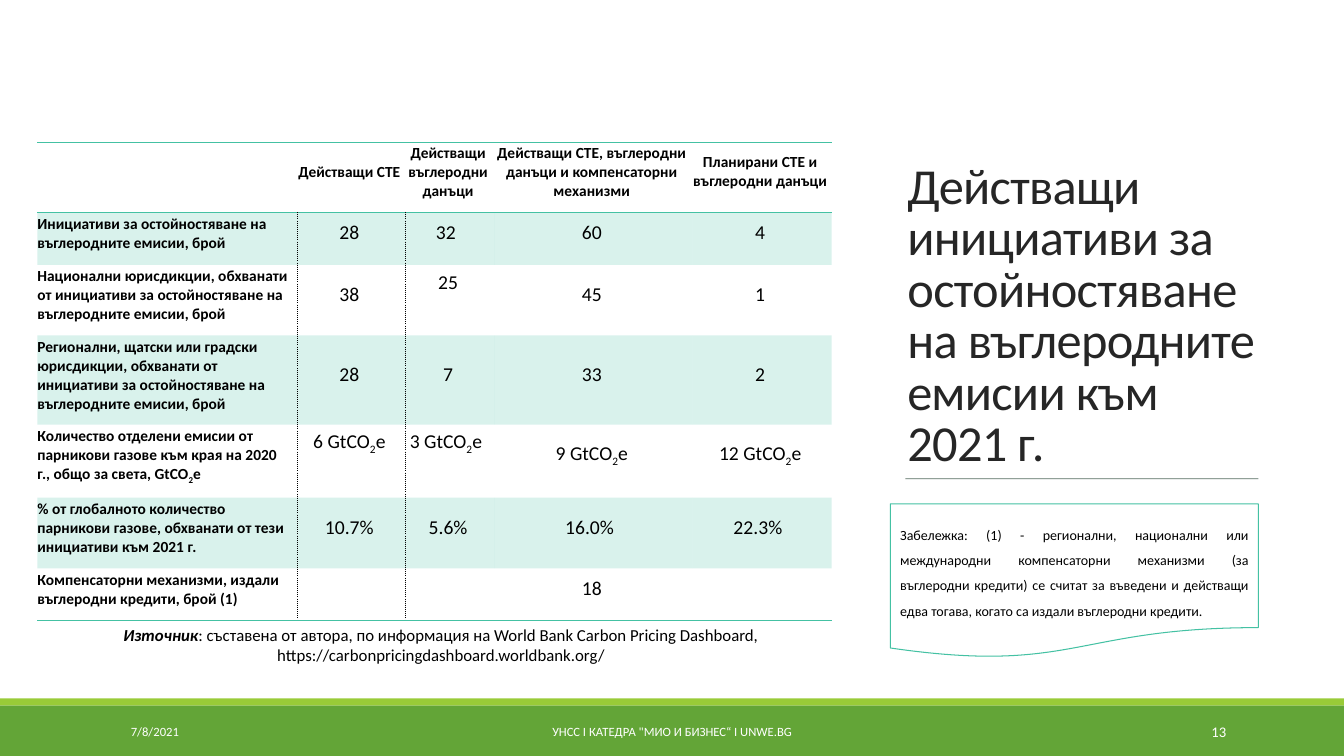
from dataclasses import dataclass
from typing import Optional

from lxml.etree import SubElement
from pptx import Presentation
from pptx.dml.color import RGBColor
from pptx.enum.shapes import MSO_CONNECTOR, MSO_SHAPE
from pptx.enum.text import MSO_ANCHOR, MSO_AUTO_SIZE, PP_ALIGN
from pptx.oxml.ns import qn
from pptx.util import Inches, Pt

BLACK = RGBColor(0x00, 0x00, 0x00)
WHITE = RGBColor(0xFF, 0xFF, 0xFF)
CHARCOAL = RGBColor(0x26, 0x26, 0x26)
SLATE = RGBColor(0x45, 0x5F, 0x51)
TEAL = RGBColor(0x44, 0xC1, 0xA3)
LIME = RGBColor(0x99, 0xCB, 0x38)
GREEN = RGBColor(0x63, 0xA5, 0x37)

NO_STYLE = "{2D5ABB26-0587-4C30-8999-92F81FD0307C}"
COLUMN_WIDTHS = (2.58, 1.07, 0.89, 1.96, 1.38)
ROW_HEIGHTS = (0.61, 0.46, 0.61, 0.75, 0.61, 0.61, 0.46)
RAISED = {(2, 2), (4, 1), (4, 2)}
TABLE_ROWS = (
    ("", "Действащи СТЕ", "Действащи въглеродни данъци",
     "Действащи СТЕ, въглеродни данъци и компенсаторни механизми",
     "Планирани СТЕ и въглеродни данъци"),
    ("Инициативи за остойностяване на въглеродните емисии, брой",
     "28", "32 ", "60", "4"),
    ("Национални юрисдикции, обхванати от инициативи за остойностяване "
     "на въглеродните емисии, брой", "38", "25", "45", "1"),
    ("Регионални, щатски или градски юрисдикции, обхванати от инициативи "
     "за остойностяване на въглеродните емисии, брой", "28", "7", "33", "2"),
    ("Количество отделени емисии от парникови газове към края на 2020 г., "
     "общо за света, GtCO2e",
     "6 GtCO2e", "3 GtCO2e ", "9 GtCO2e", "12 GtCO2e"),
    ("% от глобалното количество парникови газове, обхванати от тези "
     "инициативи към 2021 г.", "10.7%", "5.6%", "16.0% ", "22.3% "),
    ("Компенсаторни механизми, издали въглеродни кредити, брой (1)",
     "", "", "18", ""),
)


@dataclass(frozen=True)
class Band:
    top: float
    height: float
    color: RGBColor


@dataclass(frozen=True)
class FooterField:
    text: str
    left: float
    width: float
    align: PP_ALIGN
    size: float = 9


BANDS = (Band(6.93, 0.07, LIME), Band(7, 0.5, GREEN))
FOOTER = (
    FooterField("7/8/2021", 1.2, 2.7, PP_ALIGN.LEFT),
    FooterField('УНСС I КАТЕДРА "МИО И БИЗНЕС“ I UNWE.BG', 4.03, 5.27, PP_ALIGN.CENTER),
    FooterField("13", 10.83, 1.43, PP_ALIGN.RIGHT, 10.5),
)


def write(paragraph, text: str, *, size: float, color: RGBColor = BLACK,
          bold: bool = False, italic: bool = False,
          align: PP_ALIGN = PP_ALIGN.LEFT, line_spacing: Optional[float] = None,
          tracking: Optional[int] = None) -> None:
    paragraph.alignment = align
    if line_spacing:
        paragraph.line_spacing = line_spacing
    before, formula, after = text.partition("CO2e")
    pieces = [(before + "CO", None), ("2", -25000), ("e" + after, None)]
    for piece, baseline in pieces if formula else [(text, None)]:
        run = paragraph.add_run()
        run.text = piece
        font = run.font
        font.name, font.size, font.bold, font.italic = "Calibri", Pt(size), bold, italic
        font.color.rgb = color
        properties = run._r.get_or_add_rPr()
        if baseline:
            properties.set("baseline", str(baseline))
        if tracking:
            properties.set("spc", str(tracking))


def add_box(slide, left: float, top: float, width: float, height: float,
            anchor: MSO_ANCHOR = MSO_ANCHOR.MIDDLE):
    frame = slide.shapes.add_textbox(
        Inches(left), Inches(top), Inches(width), Inches(height)).text_frame
    frame.word_wrap = True
    frame.vertical_anchor = anchor
    return frame.paragraphs[0]


def set_alpha(element, percent: int) -> None:
    color = next(element.iter(qn("a:srgbClr")))
    SubElement(color, qn("a:alpha")).set("val", str(percent * 1000))


def add_border(cell, side: str, color: RGBColor, dash: str = "solid") -> None:
    line = SubElement(cell._tc.get_or_add_tcPr(), qn(f"a:ln{side}"), w=str(Pt(1)))
    fill = SubElement(line, qn("a:solidFill"))
    SubElement(fill, qn("a:srgbClr"), val=str(color))
    SubElement(line, qn("a:prstDash"), val=dash)


def format_cell(cell, row: int, column: int, text: str) -> None:
    header, label = row == 0, column == 0
    cell.margin_left, cell.margin_top, cell.margin_right = Inches(0), Inches(0.02), Inches(0.04)
    cell.margin_bottom = Inches(0.37 if (row, column) in RAISED else 0.13)
    cell.vertical_anchor = MSO_ANCHOR.TOP if label else MSO_ANCHOR.MIDDLE
    if text:
        write(cell.text_frame.paragraphs[0], text,
              size=11 if header or label else 14, bold=header or label,
              align=PP_ALIGN.LEFT if label else PP_ALIGN.CENTER)
    if not header and column == 1:
        add_border(cell, "L", BLACK, "sysDot")
    if not header and label:
        add_border(cell, "R", BLACK, "sysDot")
    if header:
        add_border(cell, "T", TEAL)
    if header or row == len(TABLE_ROWS) - 1:
        add_border(cell, "B", TEAL)
    if row % 2:
        cell.fill.solid()
        cell.fill.fore_color.rgb = TEAL
        set_alpha(cell._tc.tcPr.find(qn("a:solidFill")), 20)
    else:
        cell.fill.background()


def add_initiatives(slide) -> None:
    frame = slide.shapes.add_table(
        len(ROW_HEIGHTS), len(COLUMN_WIDTHS), Inches(0.37), Inches(1.41),
        Inches(sum(COLUMN_WIDTHS)), Inches(sum(ROW_HEIGHTS)))
    next(frame.element.iter(qn("a:tableStyleId"))).text = NO_STYLE
    initiatives = frame.table
    initiatives.first_row = initiatives.horz_banding = False
    for column, width in zip(initiatives.columns, COLUMN_WIDTHS):
        column.width = Inches(width)
    for row, (height, texts) in enumerate(zip(ROW_HEIGHTS, TABLE_ROWS)):
        initiatives.rows[row].height = Inches(height)
        for column, text in enumerate(texts):
            format_cell(initiatives.cell(row, column), row, column, text)


def add_heading(slide) -> None:
    heading = slide.shapes.title
    heading.left, heading.top = Inches(8.9), Inches(0.7)
    heading.width, heading.height = Inches(3.71), Inches(4.03)
    frame = heading.text_frame
    frame.word_wrap = True
    frame.auto_size = MSO_AUTO_SIZE.NONE
    frame.vertical_anchor = MSO_ANCHOR.BOTTOM
    write(frame.paragraphs[0],
          "Действащи инициативи за остойностяване на въглеродните емисии към 2021 г.",
          size=36, color=CHARCOAL, line_spacing=0.85, tracking=-50)
    rule = slide.shapes.add_connector(
        MSO_CONNECTOR.STRAIGHT, Inches(8.98), Inches(4.75), Inches(12.48), Inches(4.75))
    rule.line.color.rgb = SLATE
    rule.line.width = Pt(0.5)
    set_alpha(rule.element.spPr, 90)
    SubElement(rule.element.spPr, qn("a:effectLst"))


def add_footer(slide) -> None:
    for band in BANDS:
        bar = slide.shapes.add_shape(MSO_SHAPE.RECTANGLE, 0, Inches(band.top),
                                     Inches(13.33), Inches(band.height))
        bar.shadow.inherit = False
        bar.fill.solid()
        bar.fill.fore_color.rgb = band.color
        bar.line.fill.background()
    for field in FOOTER:
        write(add_box(slide, field.left, 7.06, field.width, 0.4), field.text,
              size=field.size, color=WHITE, align=field.align)


def add_notes(slide) -> None:
    source = add_box(slide, 0.37, 6.15, 8.01, 0.5, MSO_ANCHOR.TOP)
    write(source, "Източник", size=12, bold=True, italic=True, align=PP_ALIGN.CENTER)
    write(source, ": съставена от автора, по информация на World Bank Carbon Pricing "
          "Dashboard, https://carbonpricingdashboard.worldbank.org/",
          size=12, align=PP_ALIGN.CENTER)
    sheet = slide.shapes.add_shape(MSO_SHAPE.FLOWCHART_DOCUMENT, Inches(8.83), Inches(5),
                                   Inches(3.65), Inches(1.53))
    sheet.shadow.inherit = False
    sheet.fill.background()
    sheet.line.color.rgb = TEAL
    sheet.line.width = Pt(0.75)
    write(add_box(slide, 8.83, 5.1, 3.65, 1.08),
          "Забележка: (1) - регионални, национални или международни компенсаторни "
          "механизми (за въглеродни кредити) се считат за въведени и действащи едва "
          "тогава, когато са издали въглеродни кредити.",
          size=10, align=PP_ALIGN.JUSTIFY, line_spacing=1.5)


def main() -> None:
    presentation = Presentation()
    presentation.slide_width, presentation.slide_height = Inches(13.33), Inches(7.5)
    slide = presentation.slides.add_slide(presentation.slide_layouts[5])
    add_heading(slide)
    add_footer(slide)
    add_initiatives(slide)
    add_notes(slide)
    presentation.save("out.pptx")


if __name__ == "__main__":
    main()
